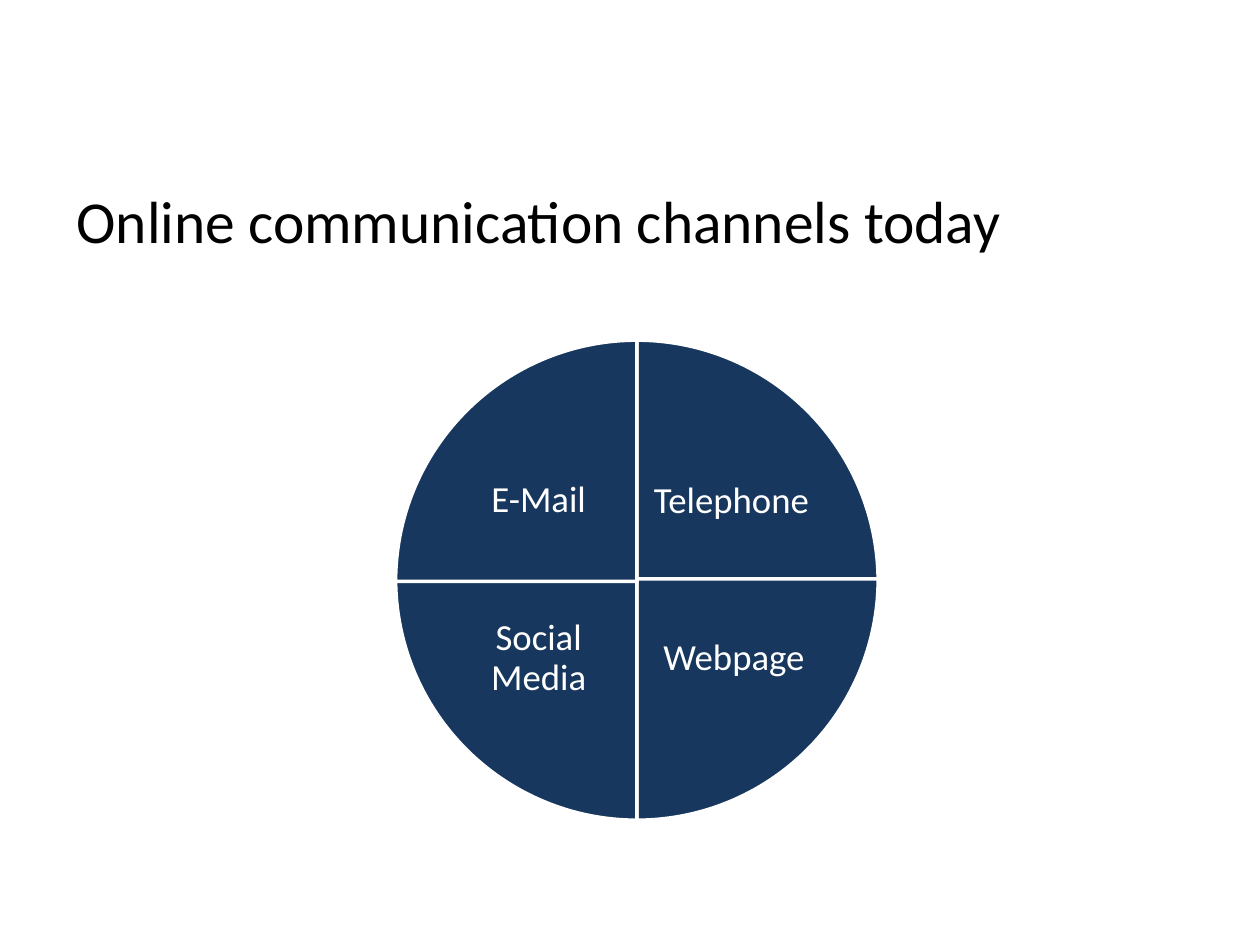
import pptx
import pptx.util
import pptx.dml.color
import pptx.enum.shapes
import pptx.enum.text

Inches = pptx.util.Inches
Pt = pptx.util.Pt
COLORS = {"navy": "17375E", "white": "FFFFFF", "black": "000000"}


def rgb(name):
    return pptx.dml.color.RGBColor.from_string(COLORS[name])


def add_label(slide, words, box, size, color, inset, paragraph_format):
    label = slide.shapes.add_textbox(*[Inches(length) for length in box])
    frame = label.text_frame
    frame_format = {
        "word_wrap": True,
        "vertical_anchor": pptx.enum.text.MSO_ANCHOR.MIDDLE,
        "margin_left": Inches(inset),
        "margin_right": Inches(inset),
        "margin_top": Inches(min(inset, 0.05)),
        "margin_bottom": Inches(min(inset, 0.05)),
    }
    for attribute, value in frame_format.items():
        setattr(frame, attribute, value)
    paragraph = frame.paragraphs[0]
    for attribute, value in paragraph_format.items():
        setattr(paragraph, attribute, value)
    run = paragraph.add_run()
    run.text = words
    run.font.color.rgb = rgb(color)
    for attribute, value in {"name": "Calibri", "size": Pt(size)}.items():
        setattr(run.font, attribute, value)


deck = pptx.Presentation()
deck.slide_width, deck.slide_height = Inches(10), Inches(7.5)
slide = deck.slides.add_slide(deck.slide_layouts[6])

# Title
add_label(slide, "Online communication channels today", (0.51, 1.31, 8.99, 0.87),
          34, "black", 0.1, {"alignment": pptx.enum.text.PP_ALIGN.LEFT})

# Quarter circles, clockwise from the top: channel, circle top, label left and top
DIAMETER = 3.83
QUARTER = 54  # 90 degrees in pie adjustment units
FULL_TURN = 4 * QUARTER
channels = [
    ("Telephone", 2.7, 5.1, 3.41),
    ("Webpage", 2.68, 5.12, 4.66),
    ("Social Media", 2.68, 3.57, 4.66),
    ("E-Mail", 2.7, 3.57, 3.4),
]
channel_format = {"alignment": pptx.enum.text.PP_ALIGN.CENTER, "line_spacing": 0.9}

for index, (channel, circle_top, label_left, label_top) in enumerate(channels):
    start = (index + 3) * QUARTER % FULL_TURN
    quarter = slide.shapes.add_shape(
        pptx.enum.shapes.MSO_SHAPE.PIE,
        Inches(3.14), Inches(circle_top), Inches(DIAMETER), Inches(DIAMETER))
    quarter.adjustments[0] = start
    quarter.adjustments[1] = (start + QUARTER) % FULL_TURN
    quarter.shadow.inherit = False
    quarter.fill.solid()
    quarter.fill.fore_color.rgb = rgb("navy")
    quarter.line.color.rgb = rgb("white")
    quarter.line.width = Pt(2)
    add_label(slide, channel, (label_left, label_top, 1.41, 1.14),
              21, "white", 0.03, channel_format)

deck.save("out.pptx")
